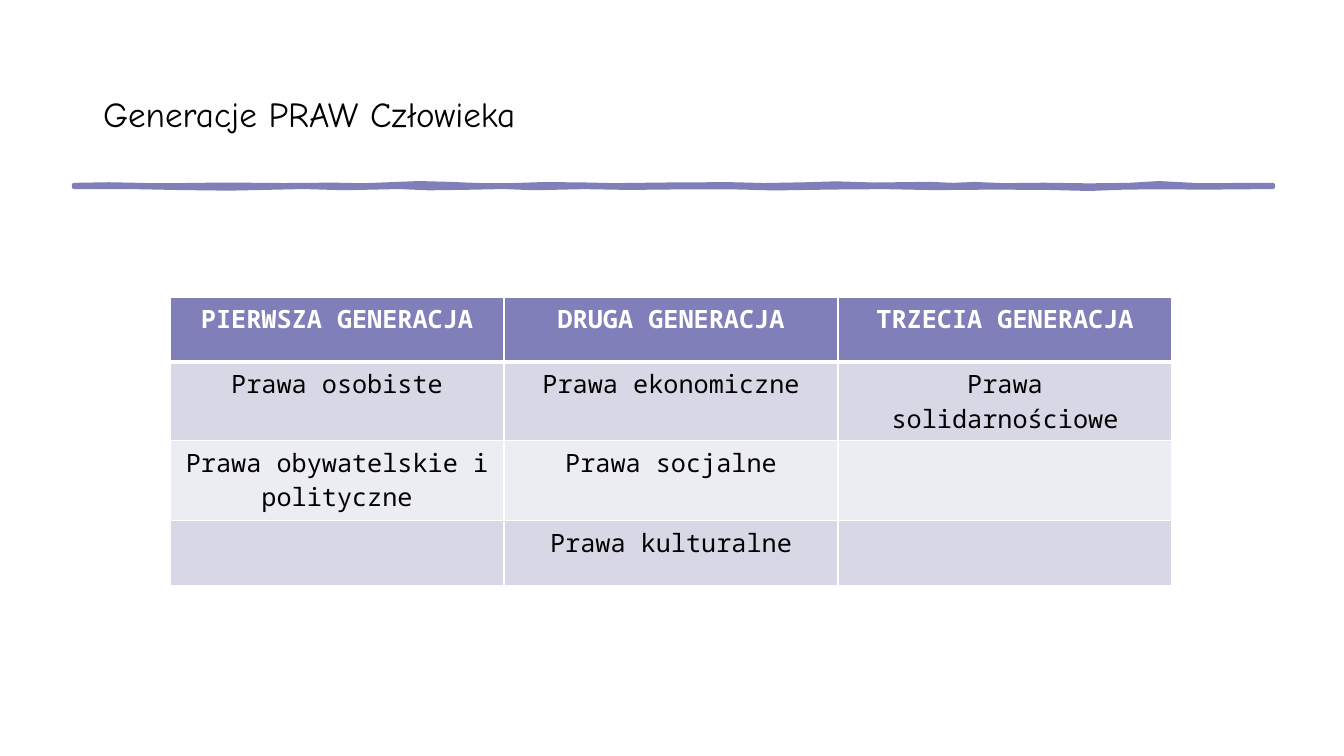
import pptx
import pptx.dml.color
import pptx.enum.text
import pptx.oxml.ns
import pptx.util
from lxml import etree

PX = 12192000 / 1344
VIOLET = pptx.dml.color.RGBColor(0x81, 0x7F, 0xBA)
LILAC = pptx.dml.color.RGBColor(0xD8, 0xD7, 0xE6)
PALE = pptx.dml.color.RGBColor(0xEC, 0xEC, 0xF3)
WHITE = pptx.dml.color.RGBColor(0xFF, 0xFF, 0xFF)
BLACK = pptx.dml.color.RGBColor(0, 0, 0)
TITLE_FONT = "Comic Neue"
TABLE_FONT = "Noto Sans Mono"

GENERATIONS = [
    ["PIERWSZA GENERACJA", "DRUGA GENERACJA", "TRZECIA GENERACJA"],
    ["Prawa osobiste", "Prawa ekonomiczne", "Prawa solidarnościowe"],
    ["Prawa obywatelskie i polityczne", "Prawa socjalne", ""],
    ["", "Prawa kulturalne", ""],
]
ROW_HEIGHTS = [65, 64, 80, 65]

# Edges of the brush stroke: x in px from its left end, y in tenths of px
STROKE_TOP = [(0, 0), (35, -6), (80, 3), (110, 2), (150, -3), (210, 2), (260, -2),
              (290, 4), (315, -6), (345, -18), (375, -10), (405, 2), (440, 2),
              (470, -8), (510, -4), (540, 3), (590, -3), (655, -7), (690, 2),
              (730, -5), (762, -15), (800, -3), (855, -10), (880, 0), (900, -9),
              (930, 3), (970, -1), (1015, 5), (1055, 0), (1085, -18),
              (1125, 3), (1199, 0)]
STROKE_BOTTOM = [(1199, 20), (1130, 26), (1085, 22), (1050, 26), (1015, 39),
                 (970, 28), (915, 26), (860, 31), (810, 21), (760, 25), (700, 34),
                 (655, 22), (600, 24), (555, 29), (510, 21), (460, 32), (430, 20),
                 (390, 28), (355, 33), (325, 20), (270, 32), (230, 20),
                 (155, 36), (105, 30), (60, 21), (0, 20)]


def px(n):
    return pptx.util.Emu(round(n * PX))


def write(tf, text, font, size, color, bold=False, align=pptx.enum.text.PP_ALIGN.LEFT):
    p = tf.paragraphs[0]
    p.alignment = align
    r = p.add_run()
    r.text = text
    r.font.name = font
    r.font.size = pptx.util.Pt(size)
    r.font.bold = bold
    r.font.color.rgb = color


def add_title(s, x, y, w, h):
    sp = s.shapes.title
    sp.left, sp.top, sp.width, sp.height = px(x), px(y), px(w), px(h)
    tf = sp.text_frame
    tf.word_wrap = True
    tf.auto_size = pptx.enum.text.MSO_AUTO_SIZE.NONE
    tf.vertical_anchor = pptx.enum.text.MSO_ANCHOR.MIDDLE
    write(tf, "Generacje PRAW Człowieka", TITLE_FONT, 25.1, BLACK)


def add_brush_stroke(s, x, y):
    points = [(dx * 10, dy) for dx, dy in STROKE_TOP + STROKE_BOTTOM]
    builder = s.shapes.build_freeform(*points[0], scale=PX / 10)
    builder.add_line_segments(points[1:], close=True)
    sp = builder.convert_to_shape(px(x), px(y))
    sp.shadow.inherit = False
    sp.fill.solid()
    sp.fill.fore_color.rgb = VIOLET
    sp.line.color.rgb = VIOLET
    sp.line.width = pptx.util.Pt(3)


def add_border(cell, side, color, width):
    tc_pr = cell._tc.get_or_add_tcPr()
    ln = etree.SubElement(tc_pr, pptx.oxml.ns.qn("a:ln" + side),
                          w=str(pptx.util.Pt(width)))
    fill = etree.SubElement(ln, pptx.oxml.ns.qn("a:solidFill"))
    etree.SubElement(fill, pptx.oxml.ns.qn("a:srgbClr"), val=str(color))


def add_generations_table(s, x, y, w):
    frame = s.shapes.add_table(len(GENERATIONS), len(GENERATIONS[0]),
                               px(x), px(y), px(w), px(sum(ROW_HEIGHTS)))
    table = frame.table
    for row, height in zip(table.rows, ROW_HEIGHTS):
        row.height = px(height)
    for i, texts in enumerate(GENERATIONS):
        header = i == 0
        for j, text in enumerate(texts):
            cell = table.cell(i, j)
            for side in "LRTB":
                under_header = (i, side) in ((0, "B"), (1, "T"))
                add_border(cell, side, WHITE, 3 if under_header else 0.96)
            cell.fill.solid()
            cell.fill.fore_color.rgb = VIOLET if header else LILAC if i % 2 else PALE
            if text:
                write(cell.text_frame, text, TABLE_FONT, 18, WHITE if header else BLACK,
                      bold=header, align=pptx.enum.text.PP_ALIGN.CENTER)


def main():
    prs = pptx.Presentation()
    prs.slide_width, prs.slide_height = px(1344), px(756)
    s = prs.slides.add_slide(prs.slide_layouts.get_by_name("Title Only"))
    s.background.fill.solid()
    s.background.fill.fore_color.rgb = WHITE
    add_brush_stroke(s, 74, 185)
    add_title(s, 93, 40, 1159, 146)
    add_generations_table(s, 170, 297, 1002)
    prs.save("out.pptx")


if __name__ == "__main__":
    main()
